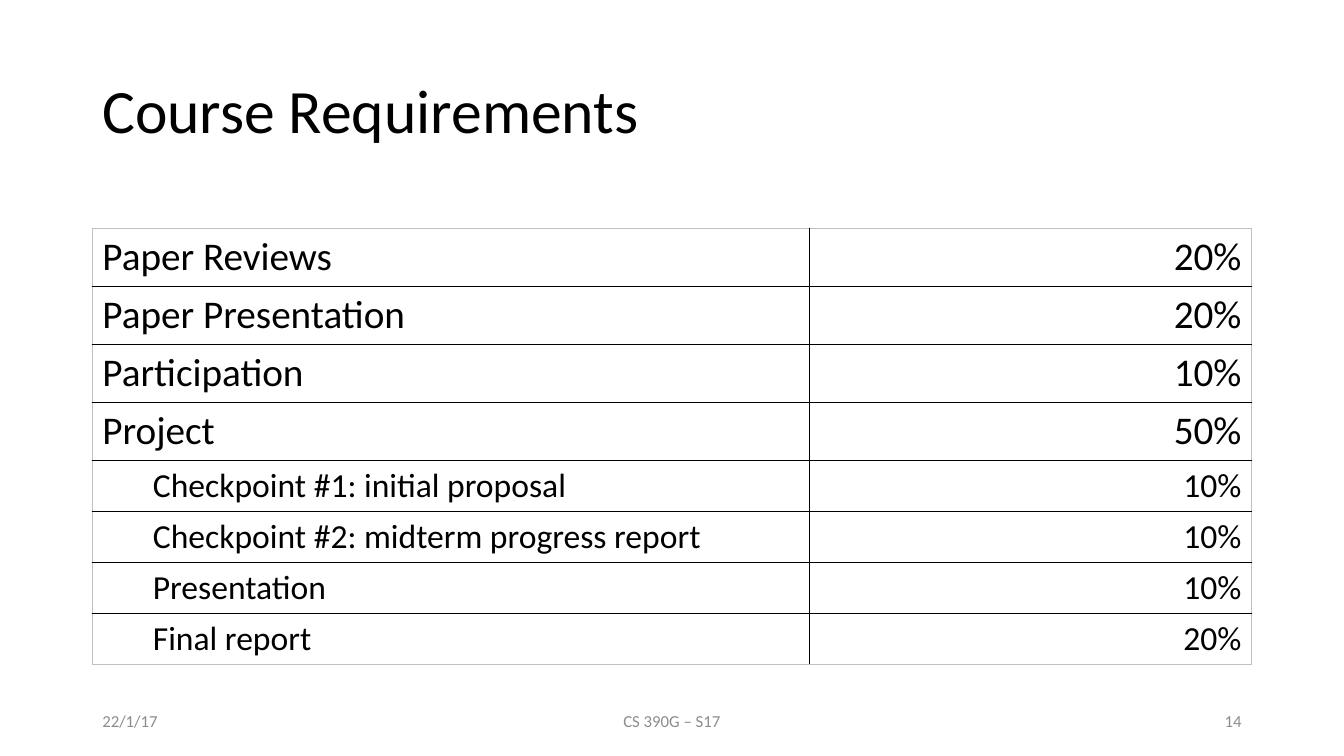
from lxml.etree import SubElement
from pptx import Presentation
from pptx.dml.color import RGBColor
from pptx.enum.text import MSO_ANCHOR, PP_ALIGN
from pptx.oxml.ns import qn
from pptx.util import Pt

FONT = "Calibri"
COLORS = {"ink": "000000", "footer": "8C8C8C", "frame": "BFBFBF", "paper": "FFFFFF"}
TITLE = "Course Requirements"
REQUIREMENTS = [
    ("Paper Reviews", "20%", 0),
    ("Paper Presentation", "20%", 0),
    ("Participation", "10%", 0),
    ("Project", "50%", 0),
    ("Checkpoint #1: initial proposal", "10%", 1),
    ("Checkpoint #2: midterm progress report", "10%", 1),
    ("Presentation", "10%", 1),
    ("Final report", "20%", 1),
]
FOOTERS = [
    ("22/1/17", 66, 216, PP_ALIGN.LEFT),
    ("CS 390G – S17", 318, 324, PP_ALIGN.CENTER),
    ("14", 678, 216, PP_ALIGN.RIGHT),
]
LEFT, WIDTH = 66, 828
COLUMN_WIDTHS = (512.5, 315.5)
LEVEL_SIZES = (28, 24)
LEVEL_HEIGHTS = (41.4, 36.5)
LEVEL_INDENT = 36


def style(para, size, color, align=PP_ALIGN.LEFT):
    para.alignment = align
    para.font.name = FONT
    para.font.size = Pt(size)
    para.font.color.rgb = RGBColor.from_string(COLORS[color])


def add_text(page, text, left, top, width, height, size, color, align=PP_ALIGN.LEFT):
    frame = page.shapes.add_textbox(Pt(left), Pt(top), Pt(width), Pt(height)).text_frame
    frame.word_wrap = True
    frame.vertical_anchor = MSO_ANCHOR.MIDDLE
    para = frame.paragraphs[0]
    para.text = text
    style(para, size, color, align)
    return para


def set_border(cell, side, color):
    line = SubElement(cell._tc.get_or_add_tcPr(), qn(f"a:ln{side}"), w=str(Pt(1)))
    fill = SubElement(line, qn("a:solidFill"))
    SubElement(fill, qn("a:srgbClr"), val=COLORS[color])


def add_requirements(page):
    heights = [LEVEL_HEIGHTS[level] for _, _, level in REQUIREMENTS]
    last_row, last_column = len(REQUIREMENTS) - 1, len(COLUMN_WIDTHS) - 1
    table = page.shapes.add_table(
        len(REQUIREMENTS), len(COLUMN_WIDTHS),
        Pt(LEFT), Pt(163.2), Pt(WIDTH), Pt(sum(heights)),
    ).table
    table.first_row = False
    table.horz_banding = False
    for column, width in zip(table.columns, COLUMN_WIDTHS):
        column.width = Pt(width)
    for r, (name, share, level) in enumerate(REQUIREMENTS):
        table.rows[r].height = Pt(heights[r])
        for c, text in enumerate((name, share)):
            cell = table.cell(r, c)
            para = cell.text_frame.paragraphs[0]
            para.text = text
            style(para, LEVEL_SIZES[level], "ink", PP_ALIGN.RIGHT if c else PP_ALIGN.LEFT)
            if level and c == 0:
                para.level = level
                para._p.get_or_add_pPr().set("marL", str(Pt(LEVEL_INDENT)))
            outer = {"L": c == 0, "R": c == last_column, "T": r == 0, "B": r == last_row}
            for side, is_outer in outer.items():
                set_border(cell, side, "frame" if is_outer else "ink")
            cell.fill.solid()
            cell.fill.fore_color.rgb = RGBColor.from_string(COLORS["paper"])


def main():
    deck = Presentation()
    deck.slide_width, deck.slide_height = Pt(960), Pt(540)
    page = deck.slides.add_slide(deck.slide_layouts[6])
    title = add_text(page, TITLE, LEFT, 28.75, WIDTH, 104.4, 44, "ink")
    title.line_spacing = 0.9
    add_requirements(page)
    for text, left, width, align in FOOTERS:
        add_text(page, text, left, 500.5, width, 28.75, 12, "footer", align)
    deck.save("out.pptx")


if __name__ == "__main__":
    main()
